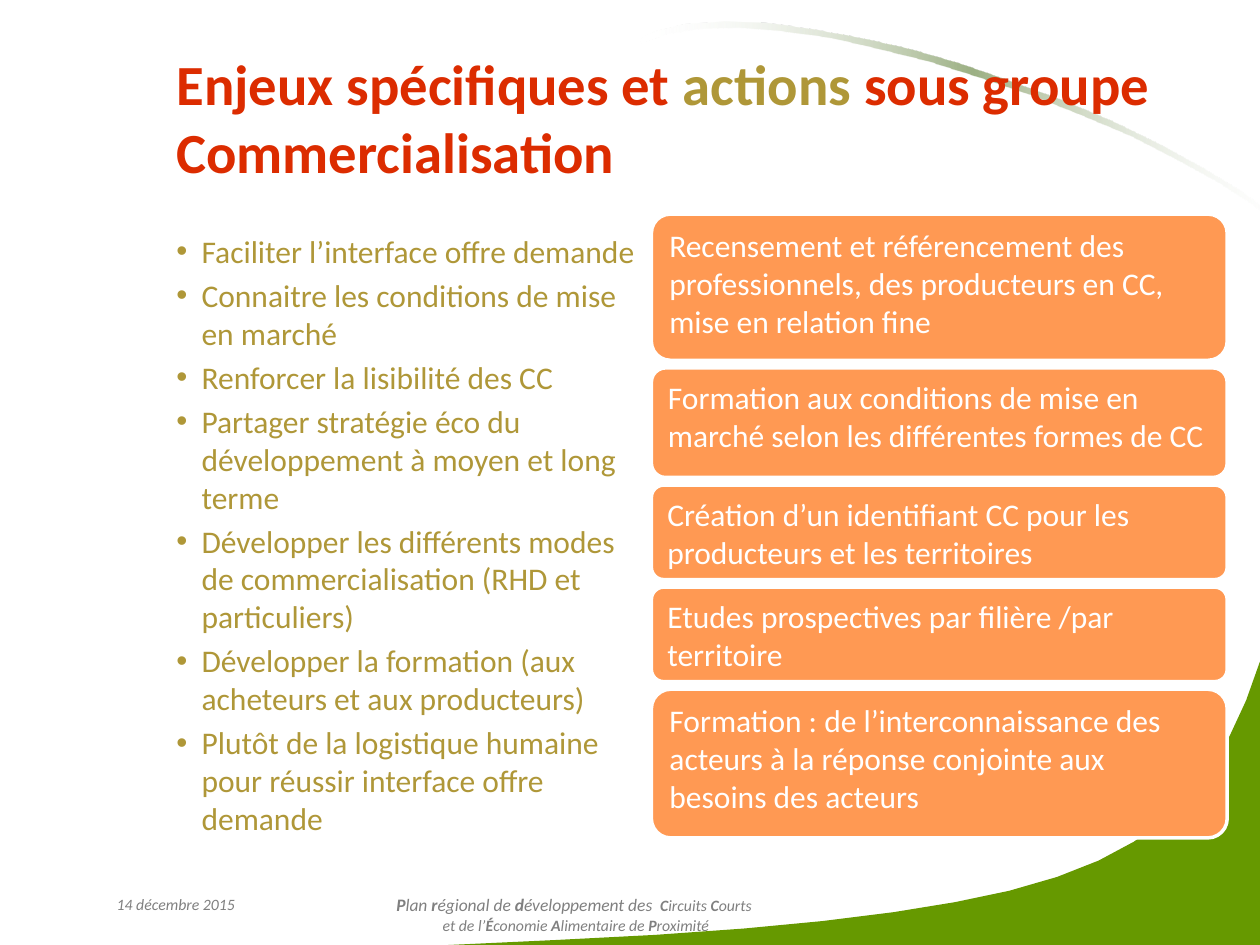
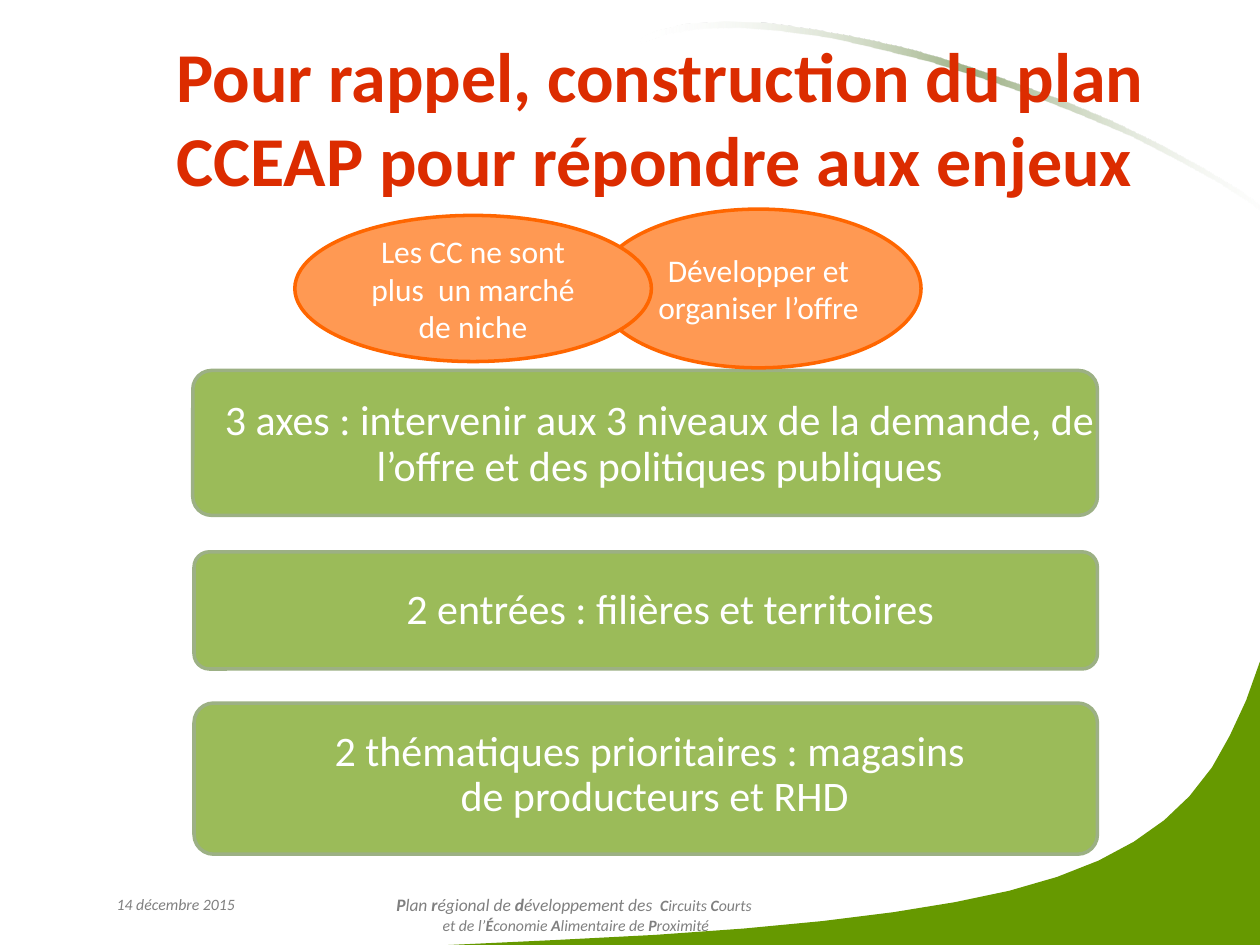
import pptx
import pptx.util
import pptx.dml.color
import pptx.enum.shapes
import pptx.enum.text
import pptx.oxml.ns
from lxml import etree

Inches = pptx.util.Inches
Pt = pptx.util.Pt
qn = pptx.oxml.ns.qn
Shapes = pptx.enum.shapes.MSO_SHAPE
Align = pptx.enum.text.PP_ALIGN
Anchor = pptx.enum.text.MSO_ANCHOR

RED, OLIVE, GREY, WHITE = "DC2C00", "AF9738", "808080", "FFFFFF"
ORANGE, DEEP_ORANGE = "FF9953", "FF6600"
GREEN, SAGE, LEAF = "669900", "9CB084", "9BBB59"

HILL = [
    (10, 5.25), (10, 7.5), (3.56, 7.5), (4.42, 7.46), (5.2, 7.42), (5.9, 7.37),
    (6.53, 7.31), (7.09, 7.24), (7.58, 7.16), (8.01, 7.07), (8.39, 6.96),
    (8.72, 6.83), (9, 6.68), (9.24, 6.51), (9.44, 6.32), (9.62, 6.09),
    (9.76, 5.84), (9.89, 5.56),
]
ARC = [
    (5.08, 0.35), (5.1, 0.3), (5.2, 0.25), (5.45, 0.19), (5.75, 0.17),
    (6.08, 0.18), (6.44, 0.23), (6.83, 0.3), (7.23, 0.39), (7.64, 0.51),
    (8.04, 0.65), (8.45, 0.8), (8.83, 0.96), (9.2, 1.14), (9.53, 1.32),
    (9.83, 1.5), (10.08, 1.68), (10.28, 1.86), (10.36, 1.95), (10.35, 1.97),
    (10.17, 1.8), (9.94, 1.62), (9.66, 1.44), (9.33, 1.26), (8.98, 1.08),
    (8.6, 0.92), (8.2, 0.76), (7.79, 0.62), (7.38, 0.49), (6.98, 0.39),
    (6.59, 0.3), (6.22, 0.25), (5.87, 0.22), (5.56, 0.23), (5.3, 0.27),
]

ISSUES = [
    "Faciliter l’interface offre demande",
    "Connaitre les conditions de mise en marché",
    "Renforcer la lisibilité des CC",
    "Partager stratégie éco du développement à moyen et long terme",
    "Développer les différents modes de commercialisation (RHD et particuliers)",
    "Développer la formation (aux acheteurs et aux producteurs)",
    "Plutôt de la logistique humaine pour réussir interface offre demande",
]
ACTIONS = [
    (1.16, "Recensement et référencement des professionnels, des producteurs en CC, mise en relation fine"),
    (0.87, "Formation aux conditions de mise en marché selon les différentes formes de CC"),
    (0.75, "Création d’un identifiant CC pour les producteurs et les territoires"),
    (0.75, "Etudes prospectives par filière /par territoire"),
    (1.18, "Formation : de l’interconnaissance des acteurs à la réponse conjointe aux besoins des acteurs"),
]
PLAN_BANDS = [
    ((1.53, 2.94, 7.18, 1.15), (1.61, 2.97, 7.25, 1.12),
     ["3 axes : intervenir aux 3 niveaux de la demande, de l’offre et des politiques publiques"]),
    ((1.54, 4.38, 7.17, 0.93), (1.19, 4.4, 8.26, 0.9),
     ["2 entrées : filières et territoires"]),
    ((1.54, 5.58, 7.17, 1.2), (2.24, 5.62, 5.91, 1.07),
     ["2 thématiques prioritaires : magasins ", "de producteurs et RHD"]),
]
GOALS = [
    ((4.73, 1.66, 2.58, 1.26), "Développer et organiser l’offre"),
    ((2.34, 1.71, 2.83, 1.16), "Les CC ne sont plus  un marché de niche"),
]


def colour(value):
    return pptx.dml.color.RGBColor.from_string(value)


def set_values(target, values):
    for name, value in values.items():
        setattr(target, name, value)


def place(shape, area):
    names = ("left", "top", "width", "height")
    set_values(shape, dict(zip(names, map(Inches, area))))


def style(size, ink, **extra):
    return {"size": Pt(size), "ink": ink, "name": "Calibri", **extra}


def write_spans(para, spans):
    for text, values in spans:
        span = para.add_run()
        span.text = text
        font_values = dict(values)
        span.font.color.rgb = colour(font_values.pop("ink"))
        set_values(span.font, font_values)


def write_text(shape, paragraphs, para_values, anchor=Anchor.TOP, margins=None):
    frame = shape.text_frame
    set_values(frame, {
        "word_wrap": True,
        "auto_size": pptx.enum.text.MSO_AUTO_SIZE.NONE,
        "vertical_anchor": anchor,
    })
    if margins is not None:
        sides = ("left", "top", "right", "bottom")
        set_values(frame, {f"margin_{side}": Inches(margins) for side in sides})
    for index, spans in enumerate(paragraphs):
        para = frame.add_paragraph() if index else frame.paragraphs[0]
        set_values(para, para_values)
        write_spans(para, spans)
    return frame


def emphasis(text, size):
    return [(part, style(size, GREY, italic=True, bold=index % 2 == 1))
            for index, part in enumerate(text.split("*")) if part]


def add_text(page, area, paragraphs, para_values, **options):
    box = page.shapes.add_textbox(*map(Inches, area))
    write_text(box, paragraphs, para_values, **options)
    return box


def add_panel(page, kind, area, fill, line):
    panel = page.shapes.add_shape(kind, *map(Inches, area))
    panel.shadow.inherit = False
    panel.fill.solid()
    panel.fill.fore_color.rgb = colour(fill)
    panel.line.color.rgb = colour(line)
    panel.line.width = Pt(2)
    if kind == Shapes.ROUNDED_RECTANGLE:
        panel.adjustments[0] = 0.13
    return panel


def add_outline(page, points):
    corners = [(Inches(x), Inches(y)) for x, y in points]
    builder = page.shapes.build_freeform(*corners[0])
    builder.add_line_segments(corners[1:], close=True)
    outline = builder.convert_to_shape()
    outline.shadow.inherit = False
    outline.line.fill.background()
    return outline


def fade_ends(shape, middle):
    shape.fill.gradient()
    shape.fill.gradient_angle = 0
    stops = shape.element.spPr.find(".//" + qn("a:gsLst"))
    stops.clear()
    for position, value, alpha in ((0, WHITE, 0), (50, middle, 100), (100, WHITE, 0)):
        stop = etree.SubElement(stops, qn("a:gs"), pos=str(position * 1000))
        tone = etree.SubElement(stop, qn("a:srgbClr"), val=value)
        etree.SubElement(tone, qn("a:alpha"), val=str(alpha * 1000))


def decorate_master(deck, page):
    hill = add_outline(page, HILL)
    hill.fill.solid()
    hill.fill.fore_color.rgb = colour(GREEN)
    arc = add_outline(page, ARC)
    fade_ends(arc, SAGE)
    centred = {"alignment": Align.CENTER}
    date = add_text(page, (0.78, 7.05, 1.23, 0.4),
                    [emphasis("14 décembre 2015", 9)], centred)
    footer = add_text(page, (2.17, 7.05, 4.8, 0.4), [
        emphasis("*P*lan* r*égional de* d*éveloppement des  ", 10)
        + emphasis("*C*ircuits *C*ourts ", 9),
        emphasis("et de l’*É*conomie *A*limentaire de *P*roximité", 9),
    ], centred)
    for shape in (hill, arc, date, footer):
        deck.slide_master.shapes.element.append(shape.element)


def set_title(page, size, parts):
    title = page.shapes.title
    place(title, (1.3, 0.3, 8.45, 1.25))
    spans = [(text, style(size, ink, bold=True)) for text, ink in parts]
    write_text(title, [spans], {"alignment": Align.LEFT}, anchor=Anchor.MIDDLE)


def add_bullet(para):
    properties = para._p.get_or_add_pPr()
    properties.set("marL", str(Inches(0.2)))
    properties.set("indent", str(Inches(-0.2)))
    etree.SubElement(properties, qn("a:buChar"), char="•")


def fill_list(body, area, items):
    place(body, area)
    spans = [[(item, style(18, OLIVE))] for item in items]
    frame = write_text(body, spans, {"alignment": Align.LEFT})
    for index, para in enumerate(frame.paragraphs):
        add_bullet(para)
        para.space_before = Pt(3.6 if index else 0)


def build_issues(page):
    set_title(page, 32.4, [("Enjeux spécifiques et ", RED), ("actions", OLIVE),
                           (" sous groupe Commercialisation", RED)])
    fill_list(page.placeholders[1], (1.3, 1.79, 3.87, 4.95), ISSUES)
    top, gap = 1.7, 0.06
    for height, action in ACTIONS:
        panel = add_panel(page, Shapes.ROUNDED_RECTANGLE,
                          (5.17, top, 4.57, height), ORANGE, WHITE)
        write_text(panel, [[(action, style(18, WHITE))]], {"alignment": Align.LEFT})
        top += height + gap


def build_plan(page):
    set_title(page, 40, [("Pour rappel, construction du plan CCEAP pour répondre aux enjeux", RED)])
    for band_area, text_area, lines in PLAN_BANDS:
        add_panel(page, Shapes.ROUNDED_RECTANGLE, band_area, LEAF, SAGE)
        add_text(page, text_area, [[(line, style(24, WHITE))] for line in lines],
                 {"alignment": Align.CENTER, "line_spacing": 0.9},
                 anchor=Anchor.MIDDLE, margins=0.13)
    for area, goal in GOALS:
        ellipse = add_panel(page, Shapes.OVAL, area, ORANGE, DEEP_ORANGE)
        write_text(ellipse, [[(goal, style(18, WHITE))]],
                   {"alignment": Align.CENTER}, anchor=Anchor.MIDDLE)


def main():
    deck = pptx.Presentation()
    deck.slide_width, deck.slide_height = Inches(10), Inches(7.5)
    issues = deck.slides.add_slide(deck.slide_layouts[1])
    decorate_master(deck, issues)
    build_issues(issues)
    build_plan(deck.slides.add_slide(deck.slide_layouts[5]))
    deck.save("out.pptx")


if __name__ == "__main__":
    main()
